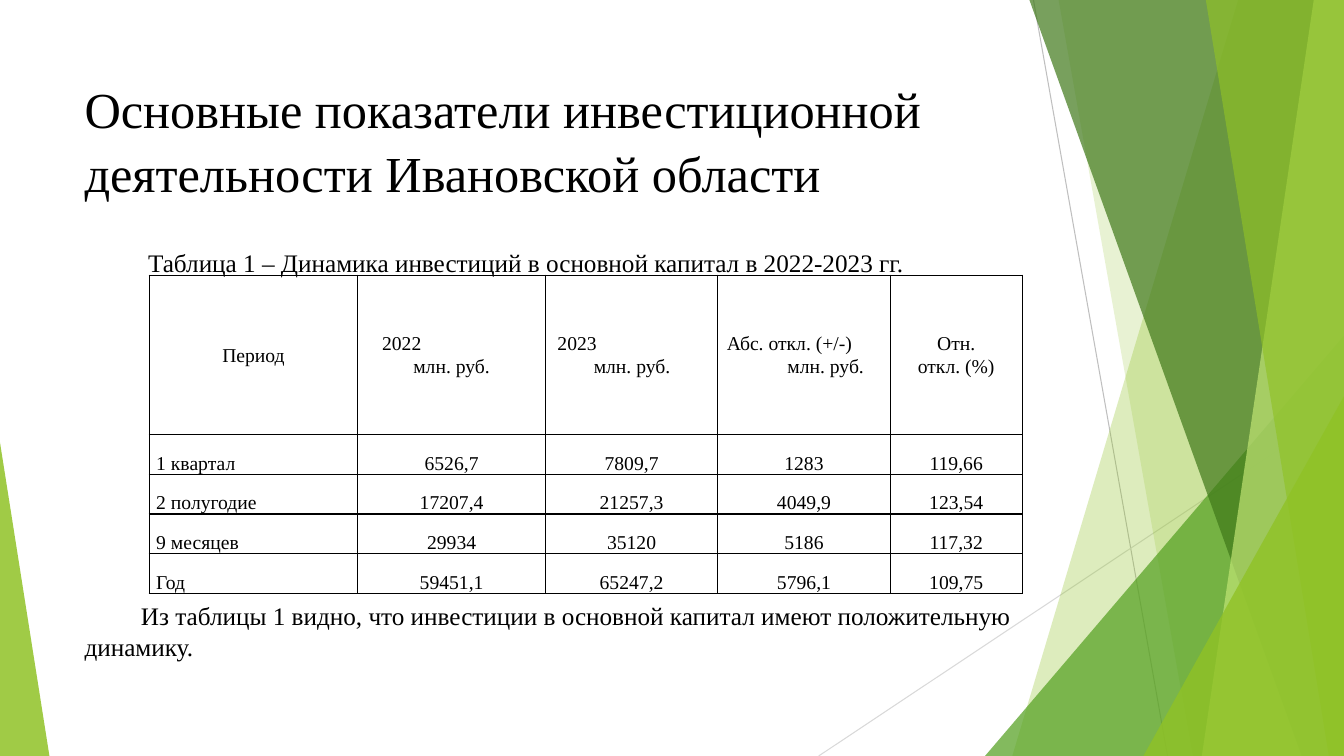
from lxml import etree
from pptx import Presentation
from pptx.dml.color import RGBColor
from pptx.enum.shapes import MSO_CONNECTOR, MSO_SHAPE
from pptx.enum.text import MSO_ANCHOR, PP_ALIGN
from pptx.oxml.ns import qn
from pptx.util import Inches, Pt

TRIANGLE = MSO_SHAPE.ISOSCELES_TRIANGLE
STRAIGHT = MSO_CONNECTOR.STRAIGHT
TOP, MIDDLE, BOTTOM = MSO_ANCHOR.TOP, MSO_ANCHOR.MIDDLE, MSO_ANCHOR.BOTTOM
LEFT, CENTER = PP_ALIGN.LEFT, PP_ALIGN.CENTER

FONT = "Times New Roman"
COLORS = {
    "text": "000000", "body": "404040", "lime": "90C226", "green": "54A021",
    "forest": "3F7819", "pale": "C0E474", "line": "BFBFBF", "light_line": "D9D9D9",
}
WIDTH, HEIGHT = 13.33, 7.5

TITLE = "Основные показатели инвестиционной деятельности Ивановской области"
CAPTION = "Таблица 1 – Динамика инвестиций в основной капитал в 2022-2023 гг."
CONCLUSION = ("Из таблицы 1 видно, что инвестиции в основной капитал "
              "имеют положительную динамику.")

# Each header line: text and left indent, None for a centred line
HEADERS = [
    [("Период", None)],
    [("2022", 0.17), ("млн. руб.", 0.48)],
    [("2023", 0.05), ("млн. руб.", 0.41)],
    [("Абс. откл. (+/-)", 0.02), ("млн. руб.", 0.62)],
    [("Отн.", None), ("откл. (%)", None)],
]
ROWS = [
    ("1 квартал", "6526,7", "7809,7", "1283", "119,66"),
    ("2 полугодие", "17207,4", "21257,3", "4049,9", "123,54"),
    ("9 месяцев", "29934", "35120", "5186", "117,32"),
    ("Год", "59451,1", "65247,2", "5796,1", "109,75"),
]
COL_WIDTHS = [2.07, 1.86, 1.71, 1.71, 1.31]
HEADER_HEIGHT, ROW_HEIGHT = 1.58, 0.395

# Start, end, colour
LINES = [
    ((10.25, 0), (11.58, HEIGHT), "line"),
    ((WIDTH, 4.03), (8.12, HEIGHT), "light_line"),
]
# Bands reach the right edge: top x, bottom x, colour, opacity in percent
# Triangles stand on the bottom edge: left, top, width, apex, colour, opacity
DECOR = [
    ("band", 12.28, 10.04, "lime", 30),
    ("band", 10.5, 11.83, "lime", 20),
    ("triangle", 9.77, 3.33, 3.56, 1, "green", 72),
    ("band", 10.21, 12.91, "forest", 70),
    ("band", 13.03, 11.92, "pale", 70),
    ("band", 11.96, 13.18, "lime", 65),
    ("triangle", 11.34, 3.93, 1.99, 1, "lime", 80),
    ("triangle", 0, 4.39, 0.49, 0, "lime", 85),
]


def rgb(name):
    return RGBColor.from_string(COLORS[name])


def paint(shape, color, opacity):
    shape.shadow.inherit = False
    shape.line.fill.background()
    shape.fill.solid()
    shape.fill.fore_color.rgb = rgb(color)
    clr = shape.fill._xPr.find(qn("a:solidFill"))[0]
    etree.SubElement(clr, qn("a:alpha"), val=str(opacity * 1000))


def add_band(s, top_x, bottom_x, color, opacity):
    builder = s.shapes.build_freeform(Inches(top_x), 0, scale=1.0)
    corners = [(WIDTH, 0), (WIDTH, HEIGHT), (bottom_x, HEIGHT)]
    builder.add_line_segments([(Inches(x), Inches(y)) for x, y in corners], close=True)
    paint(builder.convert_to_shape(), color, opacity)


def add_triangle(s, left, top, width, apex, color, opacity):
    sp = s.shapes.add_shape(TRIANGLE, Inches(left), Inches(top),
                            Inches(width), Inches(HEIGHT - top))
    sp.adjustments[0] = apex
    paint(sp, color, opacity)


def add_line(s, start, end, color):
    ends = [Inches(v) for v in start + end]
    line = s.shapes.add_connector(STRAIGHT, *ends)
    line.line.color.rgb = rgb(color)
    line.line.width = Pt(0.75)
    etree.SubElement(line._element.spPr, qn("a:effectLst"))


def add_run(p, text, size, color="text"):
    r = p.add_run()
    r.text = text
    r.font.name = FONT
    r.font.size = Pt(size)
    r.font.color.rgb = rgb(color)


def add_text(s, text, top, height, size, indent=0, color="text", spacing=1.0):
    box = s.shapes.add_textbox(Inches(0.74), Inches(top), Inches(9.4), Inches(height))
    tf = box.text_frame
    tf.word_wrap = True
    tf.vertical_anchor = TOP
    p = tf.paragraphs[0]
    p.line_spacing = spacing
    p._p.get_or_add_pPr().set("indent", str(Inches(indent)))
    add_run(p, text, size, color)


def set_cell(cell, lines, anchor):
    """Fill a cell with (text, alignment, left indent) lines and draw its borders."""
    cell.vertical_anchor = anchor
    cell.margin_left = cell.margin_right = Inches(0.07)
    cell.margin_top = cell.margin_bottom = 0
    tcPr = cell._tc.get_or_add_tcPr()
    for side in ("lnL", "lnR", "lnT", "lnB"):
        ln = etree.SubElement(tcPr, qn("a:" + side), w=str(Pt(1)))
        fill = etree.SubElement(ln, qn("a:solidFill"))
        etree.SubElement(fill, qn("a:srgbClr"), val=COLORS["text"])
    cell.fill.background()
    tf = cell.text_frame
    for i, (text, align, indent) in enumerate(lines):
        p = tf.add_paragraph() if i else tf.paragraphs[0]
        p.alignment = align
        p.line_spacing = 1.07
        p._p.get_or_add_pPr().set("marL", str(Inches(indent)))
        add_run(p, text, 14)


def add_investment_table(s):
    height = HEADER_HEIGHT + ROW_HEIGHT * len(ROWS)
    frame = s.shapes.add_table(len(ROWS) + 1, len(COL_WIDTHS), Inches(1.48), Inches(2.73),
                               Inches(sum(COL_WIDTHS)), Inches(height))
    table = frame.table
    table.first_row = table.horz_banding = False
    for col, width in zip(table.columns, COL_WIDTHS):
        col.width = Inches(width)
    for i, row in enumerate(table.rows):
        row.height = Inches(ROW_HEIGHT if i else HEADER_HEIGHT)
    for c, header in enumerate(HEADERS):
        lines = [(text, CENTER if indent is None else LEFT, indent or 0)
                 for text, indent in header]
        set_cell(table.cell(0, c), lines, MIDDLE)
    for r, values in enumerate(ROWS, start=1):
        for c, value in enumerate(values):
            set_cell(table.cell(r, c), [(value, CENTER if c else LEFT, 0)], BOTTOM)


def main():
    prs = Presentation()
    prs.slide_width, prs.slide_height = Inches(WIDTH), Inches(HEIGHT)
    s = prs.slides.add_slide(prs.slide_layouts[6])
    for line in LINES:
        add_line(s, *line)
    draw = {"band": add_band, "triangle": add_triangle}
    for kind, *values in DECOR:
        draw[kind](s, *values)
    add_text(s, TITLE, 0.7, 1.44, 36, spacing=1.05)
    add_text(s, CAPTION, 2.4, 0.4, 18, indent=0.63)
    add_text(s, CONCLUSION, 5.91, 0.7, 18, indent=0.56)
    add_investment_table(s)
    prs.save("out.pptx")


if __name__ == "__main__":
    main()
